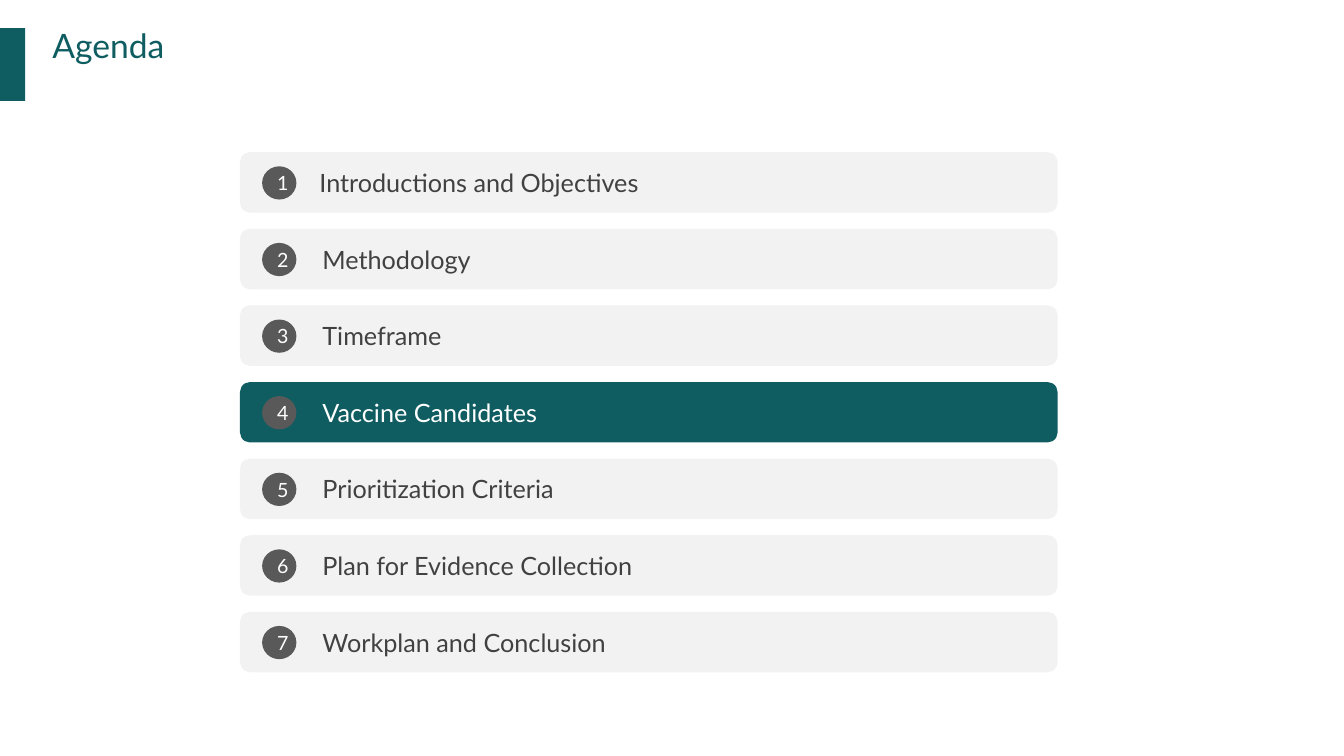
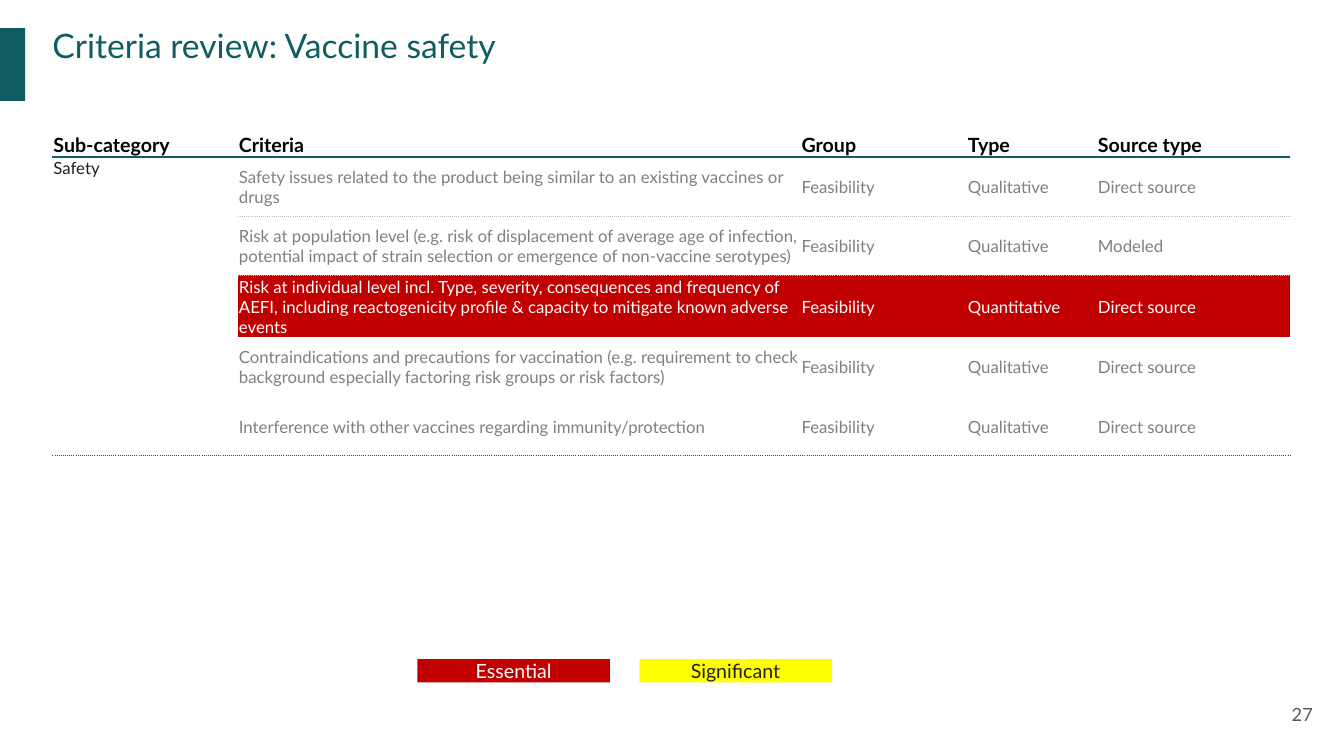
"""Build the agenda and the vaccine safety criteria slides."""
from dataclasses import dataclass
from typing import NamedTuple, Optional

from lxml.etree import SubElement
from pptx import Presentation
from pptx.dml.color import RGBColor
from pptx.enum.shapes import MSO_SHAPE as Shape
from pptx.enum.text import MSO_ANCHOR as Anchor, MSO_AUTO_SIZE as AutoSize, PP_ALIGN as Align
from pptx.oxml.ns import qn
from pptx.util import Emu, Pt

EMU_PER_PX = 9144
FONT = "Lato"
NO_GRID_STYLE = "{2D5ABB26-0587-4C30-8999-92F81FD0307C}"
COLORS = {
    "teal": "0F5D61",
    "panel": "F2F2F2",
    "badge": "595959",
    "label": "414141",
    "ink": "202020",
    "muted": "808080",
    "dots": "BFBFBF",
    "red": "C00000",
    "yellow": "FFFF00",
    "white": "FFFFFF",
    "black": "000000",
}


class Box(NamedTuple):
    left: int
    top: int
    width: int
    height: int


class Rule(NamedTuple):
    color: str
    points: float
    dash: str = "solid"


@dataclass(frozen=True)
class AgendaItem:
    text: str
    active: bool = False
    text_left: int = 310


@dataclass(frozen=True)
class Criterion:
    text: str
    kind: str = "Qualitative"
    source: str = "Direct source"
    essential: bool = False
    group: str = "Feasibility"


@dataclass(frozen=True)
class LegendKey:
    text: str
    fill: str
    color: str


AGENDA = [
    AgendaItem("Introductions and Objectives", text_left=307),
    AgendaItem("Methodology"),
    AgendaItem("Timeframe"),
    AgendaItem("Vaccine Candidates", active=True),
    AgendaItem("Prioritization Criteria"),
    AgendaItem("Plan for Evidence Collection"),
    AgendaItem("Workplan and Conclusion"),
]
AGENDA_PITCH = 76
HEADERS = ["Sub-category", "Criteria", "Group", "Type", "Source type"]
COLUMN_WIDTHS = [184, 558, 165, 129, 192]
HEADER_HEIGHT, ROW_HEIGHT = 22, 59
CRITERIA = [
    Criterion("Safety issues related to the product being similar to an existing vaccines or drugs"),
    Criterion("Risk at population level (e.g. risk of displacement of average age of infection, "
              "potential impact of strain selection or emergence of non-vaccine serotypes)",
              source="Modeled"),
    Criterion("Risk at individual level incl. Type, severity, consequences and frequency of AEFI, "
              "including reactogenicity profile & capacity to mitigate known adverse events",
              kind="Quantitative", essential=True),
    Criterion("Contraindications and precautions for vaccination (e.g. requirement to check "
              "background especially factoring risk groups or risk factors)"),
    Criterion("Interference with other vaccines regarding immunity/protection"),
]
ROW_RULES = {
    1: Rule("teal", 1.5),
    2: Rule("dots", 0.75, "sysDot"),
    len(CRITERIA) + 1: Rule("teal", 1, "sysDot"),
}
LEGEND = [LegendKey("Essential", "red", "white"), LegendKey("Significant", "yellow", "ink")]
LEGEND_PITCH = 220


def px(length: int) -> Emu:
    return Emu(length * EMU_PER_PX)


def rgb(name: str) -> RGBColor:
    return RGBColor.from_string(COLORS[name])


def write(frame, text: str, *, size: int, color: str, bold: bool = False,
          align=Align.LEFT, anchor=Anchor.TOP, inset: Optional[int] = None) -> None:
    frame.word_wrap = True
    frame.vertical_anchor = anchor
    if inset is not None:
        frame.margin_left = frame.margin_right = px(inset)
        frame.margin_top = frame.margin_bottom = px(inset)
    para = frame.paragraphs[0]
    para.alignment = align
    span = para.add_run()
    span.text = text
    span.font.name = FONT
    span.font.size = Pt(size)
    span.font.bold = bold
    span.font.color.rgb = rgb(color)


def add_block(page, kind, box: Box, fill: str):
    block = page.shapes.add_shape(kind, *map(px, box))
    block.shadow.inherit = False
    block.fill.solid()
    block.fill.fore_color.rgb = rgb(fill)
    block.line.fill.background()
    return block


def add_label(page, box: Box, text: str, **text_format) -> None:
    label = page.shapes.add_textbox(*map(px, box))
    write(label.text_frame, text, **text_format)


def add_page(deck, heading: str):
    page = deck.slides.add_slide(deck.slide_layouts[5])
    add_block(page, Shape.RECTANGLE, Box(-1, 28, 26, 72), "teal")
    title = page.shapes.title
    title.left, title.top, title.width, title.height = map(px, Box(52, 25, 1255, 80))
    title.text_frame.auto_size = AutoSize.NONE
    write(title.text_frame, heading, size=24, color="teal", inset=0)
    return page


def add_agenda_item(page, number: int, item: AgendaItem) -> None:
    top = 151 + (number - 1) * AGENDA_PITCH
    fill, color = ("teal", "white") if item.active else ("panel", "label")
    add_block(page, Shape.ROUNDED_RECTANGLE, Box(238, top, 811, 60), fill)
    badge = add_block(page, Shape.OVAL, Box(260, top + 14, 34, 33), "badge")
    write(badge.text_frame, str(number), size=14, color="white",
          align=Align.CENTER, anchor=Anchor.MIDDLE)
    add_label(page, Box(item.text_left, top + 10, 693, 40), item.text, size=18, color=color)


def set_border(cell, side: str, rule: Optional[Rule]) -> None:
    if rule is None:
        return
    properties = cell._tc.get_or_add_tcPr()
    line = SubElement(properties, qn(f"a:{side}"), w=str(Pt(rule.points)))
    fill = SubElement(line, qn("a:solidFill"))
    SubElement(fill, qn("a:srgbClr"), val=COLORS[rule.color])
    SubElement(line, qn("a:prstDash"), val=rule.dash)
    properties.insert(0, line)


def fill_cell(cell, text: str, fill: Optional[str], top: Optional[Rule],
              bottom: Optional[Rule], **text_format) -> None:
    if text:
        write(cell.text_frame, text, **text_format)
    cell.vertical_anchor = text_format.get("anchor", Anchor.MIDDLE)
    cell.margin_left = cell.margin_right = cell.margin_top = px(1)
    cell.margin_bottom = 0
    if fill:
        cell.fill.solid()
        cell.fill.fore_color.rgb = rgb(fill)
    else:
        cell.fill.background()
    set_border(cell, "lnB", bottom)
    set_border(cell, "lnT", top)


def add_criteria_table(page) -> None:
    count = len(CRITERIA) + 1
    heights = [HEADER_HEIGHT] + [ROW_HEIGHT] * len(CRITERIA)
    box = Box(52, 131, sum(COLUMN_WIDTHS), sum(heights))
    table = page.shapes.add_table(count, len(HEADERS), *map(px, box)).table
    table.first_row = table.horz_banding = False
    table._tbl.tblPr.find(qn("a:tableStyleId")).text = NO_GRID_STYLE
    for column, width in zip(table.columns, COLUMN_WIDTHS):
        column.width = px(width)
    for row, height in zip(table.rows, heights):
        row.height = px(height)
    table.cell(1, 0).merge(table.cell(count - 1, 0))
    for column, header in enumerate(HEADERS):
        fill_cell(table.cell(0, column), header, None, None, ROW_RULES[1],
                  size=14, color="black", bold=True, anchor=Anchor.MIDDLE)
    for row, item in enumerate(CRITERIA, start=1):
        fill_cell(table.cell(row, 0), "Safety" if row == 1 else "", None,
                  ROW_RULES[1] if row == 1 else None, ROW_RULES[count],
                  size=12, color="ink", anchor=Anchor.TOP)
        fill, color = ("red", "white") if item.essential else ("white", "muted")
        values = [item.text, item.group, item.kind, item.source]
        for column, value in enumerate(values, start=1):
            fill_cell(table.cell(row, column), value, fill,
                      ROW_RULES.get(row), ROW_RULES.get(row + 1),
                      size=12, color=color, anchor=Anchor.MIDDLE)


def build_agenda(deck) -> None:
    page = add_page(deck, "Agenda")
    for number, item in enumerate(AGENDA, start=1):
        add_agenda_item(page, number, item)


def build_criteria(deck) -> None:
    page = add_page(deck, "Criteria review: Vaccine safety")
    add_label(page, Box(1235, 680, 80, 57), "27", size=13, color="badge",
              align=Align.RIGHT, anchor=Anchor.MIDDLE, inset=13)
    add_criteria_table(page)
    for index, key in enumerate(LEGEND):
        box = Box(414 + index * LEGEND_PITCH, 654, 191, 23)
        block = add_block(page, Shape.RECTANGLE, box, key.fill)
        write(block.text_frame, key.text, size=14, color=key.color,
              align=Align.CENTER, anchor=Anchor.MIDDLE)


def main() -> None:
    deck = Presentation()
    deck.slide_width, deck.slide_height = px(1333), px(750)
    build_agenda(deck)
    build_criteria(deck)
    deck.save("out.pptx")


if __name__ == "__main__":
    main()
